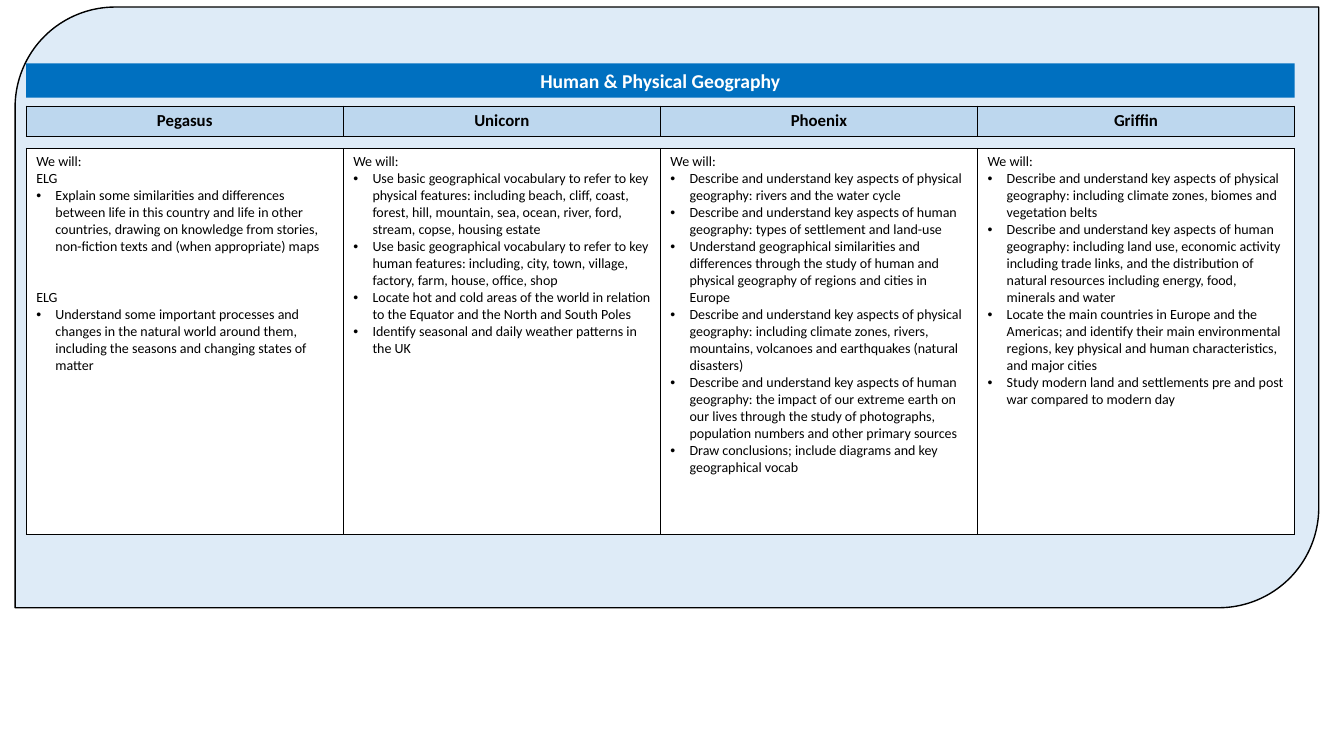
"""Build the Human & Physical Geography curriculum slide."""
from dataclasses import dataclass

from lxml import etree
from pptx import Presentation
from pptx.dml.color import RGBColor
from pptx.enum.shapes import MSO_SHAPE
from pptx.enum.text import MSO_ANCHOR, PP_ALIGN
from pptx.oxml.ns import qn
from pptx.util import Inches, Pt

PANEL = MSO_SHAPE.ROUND_2_DIAG_RECTANGLE
RECT = MSO_SHAPE.RECTANGLE
CENTER = PP_ALIGN.CENTER
LEFT = PP_ALIGN.LEFT
MIDDLE = MSO_ANCHOR.MIDDLE
FONT = "Calibri"
BLACK, WHITE = "000000", "FFFFFF"
EDGE, WIDE = 0.26, 12.58
INDENT = Inches(0.19)


@dataclass
class Line:
    text: str
    bullet: bool = True
    gap: float = 0
    size: float = 10
    bold: bool = False
    align: PP_ALIGN = LEFT
    color: str = BLACK


@dataclass
class Grid:
    top: float
    high: float
    fill: str
    cells: list[list[Line]]


def head(text: str, size: float = 12, color: str = BLACK) -> Line:
    return Line(text, False, 0, size, True, CENTER, color)


INTRO = Line("We will:", False)
NAMES = ["Pegasus", "Unicorn", "Phoenix", "Griffin"]
GOALS = [
    [
        INTRO,
        Line("ELG", False),
        Line("Explain some similarities and differences between life in this country and life in other "
             "countries, drawing on knowledge from stories, non-fiction texts and (when appropriate) maps"),
        Line("ELG", False, 24.4),
        Line("Understand some important processes and changes in the natural world around them, "
             "including the seasons and changing states of matter"),
    ],
    [
        INTRO,
        Line("Use basic geographical vocabulary to refer to key physical features: including beach, cliff, "
             "coast, forest, hill, mountain, sea, ocean, river, ford, stream, copse, housing estate"),
        Line("Use basic geographical vocabulary to refer to key human features: including, city, town, "
             "village, factory, farm, house, office, shop"),
        Line("Locate hot and cold areas of the world in relation to the Equator and the North and South Poles"),
        Line("Identify seasonal and daily weather patterns in the UK"),
    ],
    [
        INTRO,
        Line("Describe and understand key aspects of physical geography: rivers and the water cycle"),
        Line("Describe and understand key aspects of human geography: types of settlement and land-use"),
        Line("Understand geographical similarities and differences through the study of human and "
             "physical geography of regions and cities in Europe"),
        Line("Describe and understand key aspects of physical geography: including climate zones, rivers, "
             "mountains, volcanoes and earthquakes (natural disasters)"),
        Line("Describe and understand key aspects of human geography: the impact of our extreme earth on "
             "our lives through the study of photographs, population numbers and other primary sources"),
        Line("Draw conclusions; include diagrams and key geographical vocab"),
    ],
    [
        INTRO,
        Line("Describe and understand key aspects of physical geography: including climate zones, biomes "
             "and vegetation belts"),
        Line("Describe and understand key aspects of human geography: including land use, economic activity "
             "including trade links, and the distribution of natural resources including energy, food, "
             "minerals and water"),
        Line("Locate the main countries in Europe and the Americas; and identify their main environmental "
             "regions, key physical and human characteristics, and major cities"),
        Line("Study modern land and settlements pre and post war compared to modern day"),
    ],
]
GRIDS = [
    Grid(1.05, 0.3, "BDD7EE", [[head(name)] for name in NAMES]),
    Grid(1.47, 3.83, WHITE, GOALS),
]


def paint(fill, color: str) -> None:
    fill.solid()
    fill.fore_color.rgb = RGBColor.from_string(color)


def write(frame, lines: list[Line]) -> None:
    frame.word_wrap = True
    for i, line in enumerate(lines):
        para = frame.add_paragraph() if i else frame.paragraphs[0]
        para.alignment = line.align
        if line.gap:
            para.space_before = Pt(line.gap)
        if line.bullet:
            props = para._p.get_or_add_pPr()
            props.set("marL", str(INDENT))
            props.set("indent", str(-INDENT))
            etree.SubElement(props, qn("a:buFont"), typeface="Arial")
            etree.SubElement(props, qn("a:buChar"), char="•")
        run = para.add_run()
        run.text = line.text
        run.font.name = FONT
        run.font.size = Pt(line.size)
        run.font.bold = line.bold
        paint(run.font.fill, line.color)


def border(cell) -> None:
    props = cell._tc.get_or_add_tcPr()
    for side in ("lnL", "lnR", "lnT", "lnB"):
        edge = etree.SubElement(props, qn(f"a:{side}"), w=str(Pt(0.5)))
        solid = etree.SubElement(edge, qn("a:solidFill"))
        etree.SubElement(solid, qn("a:srgbClr"), val=BLACK)


def add_box(slide, kind: MSO_SHAPE, at: tuple[float, ...], color: str):
    box = slide.shapes.add_shape(kind, *map(Inches, at))
    box.shadow.inherit = False
    paint(box.fill, color)
    return box


def add_grid(slide, grid: Grid) -> None:
    count = len(grid.cells)
    area = map(Inches, (EDGE, grid.top, WIDE, grid.high))
    table = slide.shapes.add_table(1, count, *area).table
    table.first_row = table.horz_banding = False
    for i, lines in enumerate(grid.cells):
        table.columns[i].width = Inches(WIDE / count)
        cell = table.cell(0, i)
        border(cell)
        paint(cell.fill, grid.fill)
        write(cell.text_frame, lines)


def main() -> None:
    deck = Presentation()
    deck.slide_width, deck.slide_height = Inches(13.33), Inches(7.5)
    slide = deck.slides.add_slide(deck.slide_layouts[6])

    panel = add_box(slide, PANEL, (0.15, 0.07, 12.93, 5.96), "DEEBF7")
    paint(panel.line.fill, BLACK)
    panel.line.width = Pt(1)

    title = add_box(slide, RECT, (EDGE, 0.63, WIDE, 0.34), "0070C0")
    title.line.fill.background()
    title.text_frame.vertical_anchor = MIDDLE
    write(title.text_frame, [head("Human & Physical Geography", 14, WHITE)])

    for grid in GRIDS:
        add_grid(slide, grid)
    deck.save("out.pptx")


if __name__ == "__main__":
    main()
